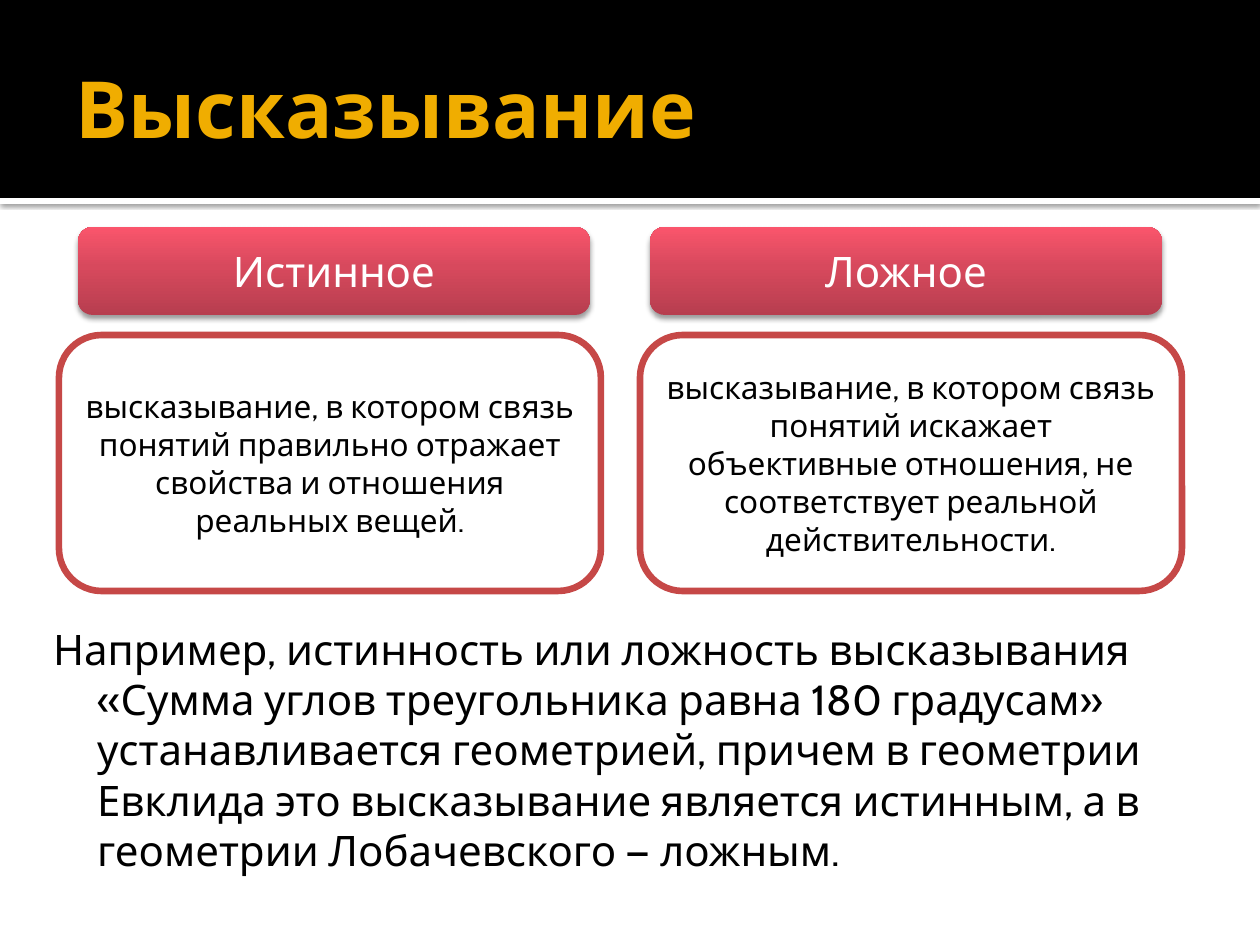
"""Build a slide on true and false statements."""
from lxml.etree import SubElement
from pptx import Presentation
from pptx.dml.color import RGBColor
from pptx.enum.shapes import MSO_SHAPE
from pptx.enum.text import MSO_ANCHOR, PP_ALIGN
from pptx.oxml import parse_xml
from pptx.oxml.ns import nsdecls, qn
from pptx.util import Emu, Pt

PX = 914400 / 126


def px(*lengths):
    return [Emu(round(n * PX)) for n in lengths]


def rgb(value):
    return RGBColor.from_string(value)


prs = Presentation()
prs.slide_width, prs.slide_height = px(1260, 945)
s = prs.slides.add_slide(prs.slide_layouts[5])

RECT, ROUND = MSO_SHAPE.RECTANGLE, MSO_SHAPE.ROUNDED_RECTANGLE
BAND_SHADOW = {"alpha": 60, "blur": 2.5, "dist": 0.8}
HEAD_SHADOW = {"alpha": 38, "blur": 3.1, "dist": 2}
GRADIENT = ((0, "B73E4F"), (55, "D7495D"), (100, "FA556C"))
TRUE_TEXT = "высказывание, в котором связь понятий правильно отражает свойства и отношения реальных вещей."
FALSE_TEXT = "высказывание, в котором связь понятий искажает объективные отношения, не соответствует реальной действительности."
EXAMPLE = ("Например, истинность или ложность высказывания «Сумма углов треугольника равна 180 градусам» "
           "устанавливается геометрией, причем в геометрии Евклида это высказывание является истинным, "
           "а в геометрии Лобачевского — ложным.")

shapes = [
    (RECT, (0, 198, 1260, 6), "FFFFFF", None, BAND_SHADOW, "", {}),
    (RECT, (0, 0, 1260, 198), "000000", None, None, "", {}),
]
for x, text in ((78, "Истинное"), (650, "Ложное")):
    shapes.append((ROUND, (x, 227, 512, 88), None, None, HEAD_SHADOW, text,
                   {"size": Pt(24), "color": "FFFFFF"}))
for x, text in ((59, TRUE_TEXT), (640, FALSE_TEXT)):
    shapes.append((ROUND, (x, 335, 542, 256), "FFFFFF", "C64847", None, text,
                   {"size": Pt(18), "color": "000000"}))

texts = []
for kind, box, fill, line, shadow, text, font in shapes:
    sp = s.shapes.add_shape(kind, *px(*box))
    sp.shadow.inherit = False
    if fill:
        sp.fill.solid()
        sp.fill.fore_color.rgb = rgb(fill)
    else:
        stops = "".join(f'<a:gs pos="{pos * 1000}"><a:srgbClr val="{c}"/></a:gs>' for pos, c in GRADIENT)
        sp.element.spPr.find(qn("a:prstGeom")).addnext(parse_xml(
            f'<a:gradFill {nsdecls("a")} rotWithShape="1"><a:gsLst>{stops}</a:gsLst>'
            '<a:lin ang="16200000" scaled="0"/></a:gradFill>'))
    if line:
        sp.line.color.rgb = rgb(line)
        sp.line.width = Pt(3.78)
    else:
        sp.line.fill.background()
    if shadow:
        effects = sp.element.spPr.find(qn("a:effectLst"))
        outer = SubElement(effects, qn("a:outerShdw"), blurRad=str(Pt(shadow["blur"])),
                           dist=str(Pt(shadow["dist"])), dir="5400000", algn="tl", rotWithShape="0")
        color = SubElement(outer, qn("a:srgbClr"), val="000000")
        SubElement(color, qn("a:alpha"), val=str(shadow["alpha"] * 1000))
    if text:
        texts.append((sp, text, font, PP_ALIGN.CENTER, MSO_ANCHOR.MIDDLE, (13, 6, 13, 6)))

title = s.shapes.title
title.element.getparent().append(title.element)
title.left, title.top, title.width, title.height = px(63, 21, 1134, 173)
texts.append((title, "Высказывание", {"size": Pt(45), "bold": True, "color": "F0AD00"},
              PP_ALIGN.LEFT, MSO_ANCHOR.MIDDLE, (13, 6, 6, 6)))

example = s.shapes.add_textbox(*px(29, 610, 1201, 256))
texts.append((example, EXAMPLE, {"size": Pt(24), "color": "000000"},
              PP_ALIGN.LEFT, MSO_ANCHOR.TOP, (8, 13, 13, 6)))

for sp, text, font, align, anchor, margins in texts:
    tf = sp.text_frame
    tf.word_wrap = True
    tf.vertical_anchor = anchor
    tf.margin_left, tf.margin_top, tf.margin_right, tf.margin_bottom = px(*margins)
    p = tf.paragraphs[0]
    p.alignment = align
    r = p.add_run()
    r.text = text
    r.font.name = "Cabin"
    for name, value in font.items():
        if name == "color":
            r.font.color.rgb = rgb(value)
        else:
            setattr(r.font, name, value)

margin, indent = px(60, -44)
pPr = example.text_frame.paragraphs[0]._p.get_or_add_pPr()
pPr.set("marL", str(margin))
pPr.set("indent", str(indent))

prs.save("out.pptx")
